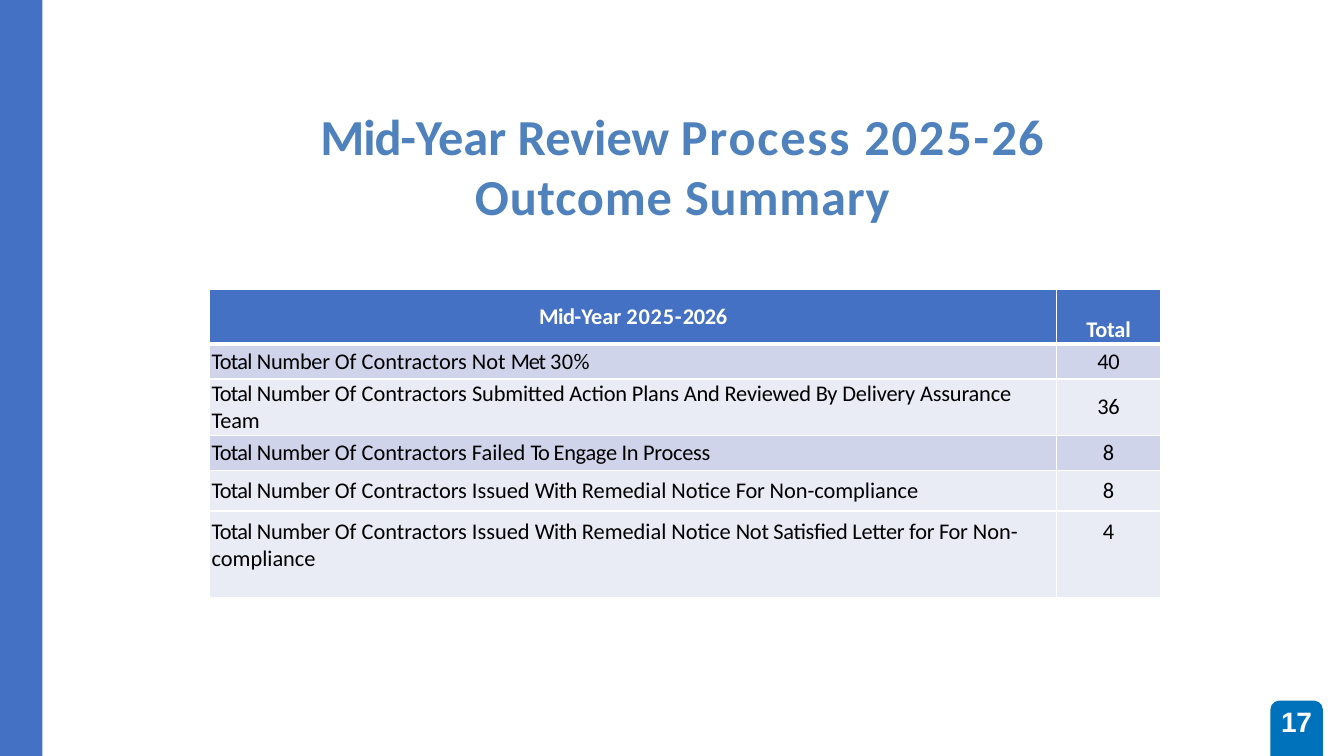
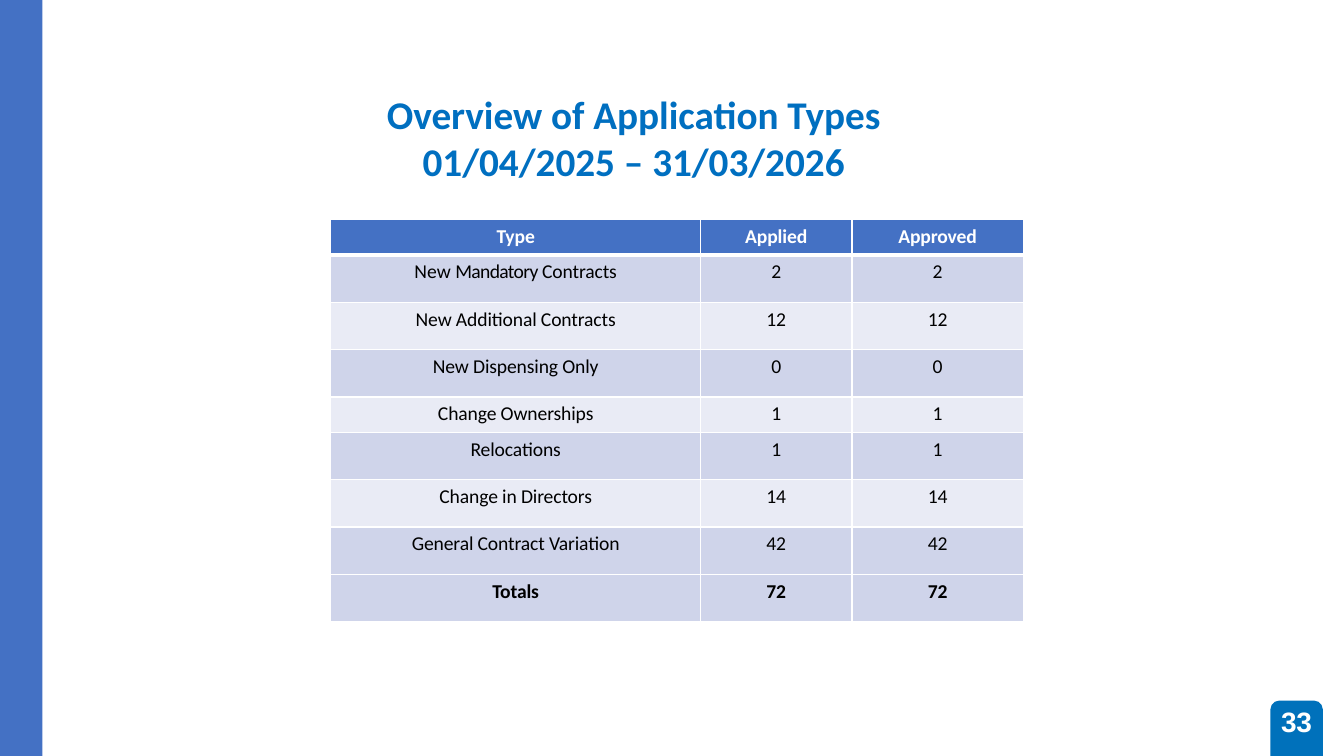
"""Build two contract review slides, each with a title and a summary table."""
from dataclasses import dataclass

from lxml import etree
from pptx import Presentation
from pptx import util as u
from pptx.dml import color
from pptx.enum import shapes, text
from pptx.oxml import ns


@dataclass(frozen=True)
class Theme:
    band: str = "4471C4"
    badge: str = "0071BB"
    title_soft: str = "4F81BD"
    title_strong: str = "006FC0"
    row_dark: str = "CFD4EA"
    row_light: str = "E9EBF5"
    white: str = "FFFFFF"
    black: str = "000000"
    body_font: str = "Calibri"
    badge_font: str = "Arial"
    title_large: int = 36
    title_small: int = 28
    badge_size: int = 20
    table_large: int = 16
    table_small: int = 14


THEME = Theme()
TOP, MIDDLE, BOTTOM = text.MSO_ANCHOR.TOP, text.MSO_ANCHOR.MIDDLE, text.MSO_ANCHOR.BOTTOM
LEFT, CENTER = text.PP_ALIGN.LEFT, text.PP_ALIGN.CENTER


def rgb(value):
    return color.RGBColor.from_string(value)


def write_text(frame, lines, *, size, fill, font=THEME.body_font, bold=False,
               align=CENTER, spacing=0):
    frame.word_wrap = True
    paragraph = frame.paragraphs[0]
    paragraph.alignment = align
    for index, line in enumerate(lines):
        if index:
            paragraph.add_line_break()
        for words, tracking in [(line, spacing)] if isinstance(line, str) else line:
            run = paragraph.add_run()
            run.text = words
            run.font.name = font
            run.font.size = u.Pt(size)
            run.font.bold = bold
            run.font.color.rgb = rgb(fill)
            run._r.get_or_add_rPr().set("spc", str(round(tracking * 100)))


def set_borders(cell, **points):
    properties = cell._tc.get_or_add_tcPr()
    for side in "LRTB":
        width = u.Pt(points.get(side, 1))
        line = etree.SubElement(properties, ns.qn(f"a:ln{side}"), w=str(width))
        solid = etree.SubElement(line, ns.qn("a:solidFill"))
        etree.SubElement(solid, ns.qn("a:srgbClr"), val=THEME.white)


class Deck:
    """Hold the theme, the presentation and the slide being built."""

    def __init__(self, theme):
        self.theme = theme
        self.presentation = Presentation()
        self.presentation.slide_width = u.Inches(13.33)
        self.presentation.slide_height = u.Inches(7.5)
        self.slide = None

    def add_slide(self, number):
        layout = self.presentation.slide_layouts[5]
        self.slide = self.presentation.slides.add_slide(layout)
        kinds = shapes.MSO_SHAPE
        self.add_block(kinds.RECTANGLE, (0, 0, 0.42, 7.5), self.theme.band)
        badge = self.add_block(kinds.ROUND_2_SAME_RECTANGLE,
                               (12.6, 6.95, 0.52, 0.55), self.theme.badge)
        badge.adjustments[0] = 0.17
        frame = badge.text_frame
        self.set_margins(frame, top=0.01)
        frame.vertical_anchor = TOP
        write_text(frame, [number], size=self.theme.badge_size, fill=self.theme.white,
                   font=self.theme.badge_font, bold=True, spacing=-0.2)

    def add_block(self, kind, box, fill):
        shape = self.slide.shapes.add_shape(kind, *map(u.Inches, box))
        shape.shadow.inherit = False
        shape.fill.solid()
        shape.fill.fore_color.rgb = rgb(fill)
        shape.line.fill.background()
        return shape

    def set_margins(self, holder, left=0, top=0):
        holder.margin_left, holder.margin_top = u.Inches(left), u.Inches(top)
        holder.margin_right = holder.margin_bottom = 0

    def add_title(self, lines, box, size, fill, spacing=0):
        title = self.slide.shapes.title
        title.left, title.top, title.width, title.height = map(u.Inches, box)
        frame = title.text_frame
        self.set_margins(frame, top=0.03)
        frame.auto_size = text.MSO_AUTO_SIZE.NONE
        frame.vertical_anchor = TOP
        write_text(frame, lines, size=size, fill=fill, bold=True, spacing=spacing)

    def add_table(self, rows, at, widths, heights, size, label_align=CENTER,
                  anchors=None, anchor=TOP, top=0, bold_rows=(0,)):
        box = (*at, sum(widths), sum(heights))
        table = self.slide.shapes.add_table(
            len(rows), len(widths), *map(u.Inches, box)).table
        table.horz_banding = False
        for column, width in zip(table.columns, widths):
            column.width = u.Inches(width)
        for row, height in zip(table.rows, heights):
            row.height = u.Inches(height)
        shades = self.theme.row_light, self.theme.row_dark
        for r, values in enumerate(rows):
            shade = shades[min(r, len(rows) - 2) % 2] if r else self.theme.band
            for c, value in enumerate(values):
                cell = table.cell(r, c)
                align = label_align if r and not c else CENTER
                cell.vertical_anchor = (anchors or {}).get((r, c), anchor)
                inset = top if cell.vertical_anchor == TOP else 0
                self.set_margins(cell, left=0.02 if align == LEFT else 0, top=inset)
                set_borders(cell, T=3 if r == 1 else 1, B=1 if r else 3)
                cell.fill.solid()
                cell.fill.fore_color.rgb = rgb(shade)
                write_text(cell.text_frame, [value], size=size, align=align,
                           fill=self.theme.black if r else self.theme.white,
                           bold=r in bold_rows, spacing=-0.1)


def total_label(words):
    return [("Total ", -0.5), ("Number ", -0.2), ("Of Contractors ", 0), *words]


def build_review(deck):
    theme = deck.theme
    deck.add_slide("17")
    deck.add_title(
        [[("Mid-", -0.8), ("Year Review ", 0), ("Process 2025-", 1.3), ("26", 0.8)],
         "Outcome Summary"],
        (3.17, 1.01, 7.2, 1.23), theme.title_large, theme.title_soft, spacing=0.6)
    notice = [("Issued ", 0), ("With ", -0.4), ("Remedial Notice ", 0)]
    rows = [
        ([("Mid-", -0.4), ("Year ", 0), ("2025-", 0.6), ("2026", -0.2)], "Total"),
        (total_label([("Not ", 0), ("Met ", -0.8), ("30%", 0.3)]), "40"),
        (total_label([("Submitted Action Plans And Reviewed By Delivery "
                       "Assurance Team", -0.1)]), "36"),
        (total_label([("Failed ", 0), ("To ", -1), ("Engage In Process", -0.2)]), "8"),
        (total_label([*notice, ("For ", -0.2), ("Non-compliance", 0)]), "8"),
        (total_label([*notice, ("Not Satisfied Letter for For ", -0.2),
                      ("Non-compliance", 0)]), "4"),
    ]
    deck.add_table(rows, (2.08, 2.87), (8.4, 1.03),
                   (0.54, 0.35, 0.56, 0.35, 0.4, 0.86), theme.table_large,
                   label_align=LEFT, anchor=MIDDLE, top=0.07,
                   anchors={(0, 1): BOTTOM, (5, 0): TOP, (5, 1): TOP})


def build_applications(deck):
    theme = deck.theme
    deck.add_slide("33")
    deck.add_title(["Overview of Application Types", "01/04/2025 – 31/03/2026"],
                   (3.83, 0.87, 4.91, 0.96), theme.title_small, theme.title_strong)
    counts = [
        ([("New ", 0), ("Mandatory ", -0.5), ("Contracts", -0.1)], "2"),
        ("New Additional Contracts", "12"),
        ("New Dispensing Only", "0"),
        ("Change Ownerships", "1"),
        ("Relocations", "1"),
        ("Change in Directors", "14"),
        ("General Contract Variation", "42"),
        ("Totals", "72"),
    ]
    rows = [("Type", "Applied", "Approved")]
    rows += [(label, count, count) for label, count in counts]
    heights = [0.35 if r in (0, 4) else 0.47 for r in range(len(rows))]
    deck.add_table(rows, (3.28, 2.18), (3.67, 1.5, 1.7), heights,
                   theme.table_small, top=0.05, bold_rows=(0, len(counts)))


def main():
    deck = Deck(THEME)
    build_review(deck)
    build_applications(deck)
    deck.presentation.save("out.pptx")


if __name__ == "__main__":
    main()
